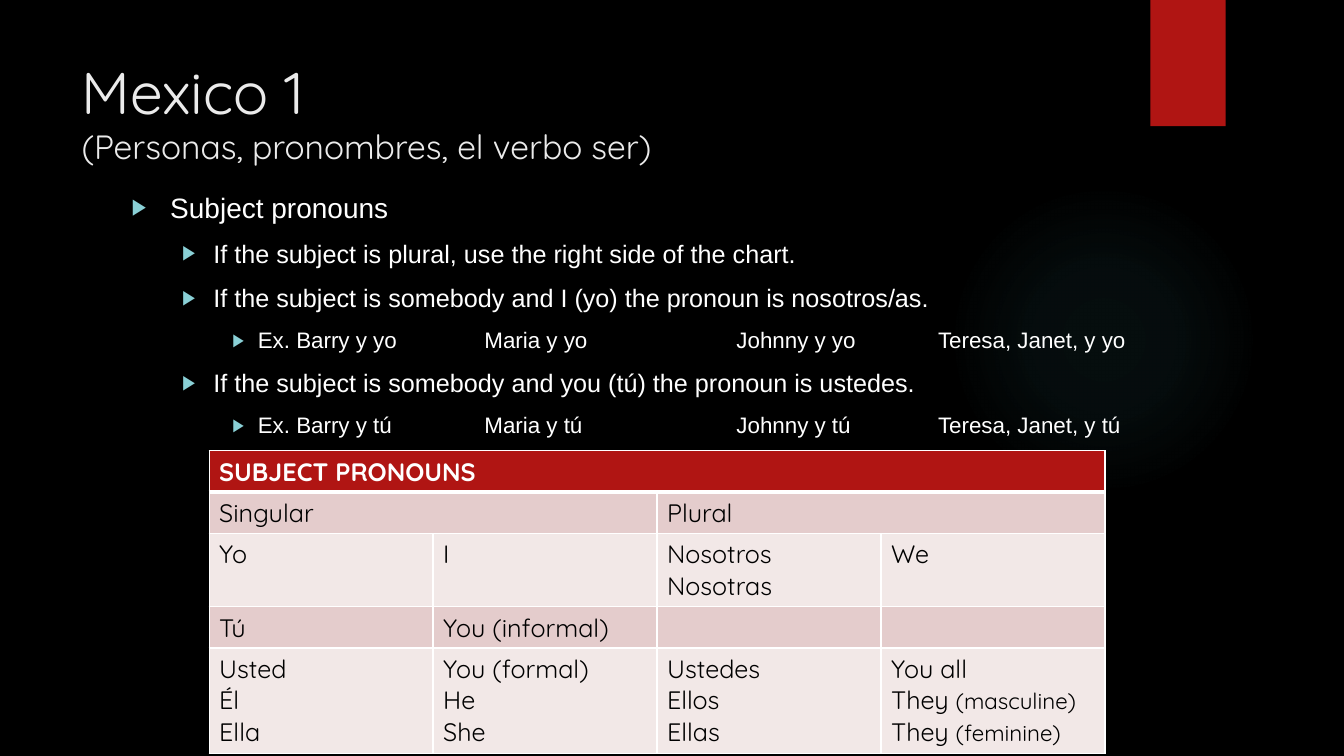
from lxml import etree
from pptx import Presentation
from pptx.dml.color import RGBColor
from pptx.enum.shapes import MSO_SHAPE
from pptx.enum.text import MSO_ANCHOR, MSO_AUTO_SIZE, PP_ALIGN
from pptx.oxml import parse_xml
from pptx.oxml.ns import qn
from pptx.util import Cm, Pt

OVAL, RECT = MSO_SHAPE.OVAL, MSO_SHAPE.RECTANGLE
TOP, LEFT, FIXED = MSO_ANCHOR.TOP, PP_ALIGN.LEFT, MSO_AUTO_SIZE.NONE

BLACK = RGBColor(0x00, 0x00, 0x00)
WHITE = RGBColor(0xFF, 0xFF, 0xFF)
PALE = RGBColor(0xEB, 0xEB, 0xEB)
RED = RGBColor(0xB0, 0x15, 0x13)
ROSE = RGBColor(0xE4, 0xCC, 0xCC)
BLUSH = RGBColor(0xF2, 0xE8, 0xE7)
TEAL = RGBColor(0x50, 0xB9, 0xC1)
AQUA = RGBColor(0x8A, 0xD0, 0xD6)
HEAD, BODY = "Quicksand", "Arial"
NS = 'xmlns:a="http://schemas.openxmlformats.org/drawingml/2006/main"'

# Content
TITLE = [("Mexico 1", 42), ("(Personas, pronombres, el verbo ser)", 24)]
POINTS = [  # level, text
    (0, "Subject pronouns"),
    (1, "If the subject is plural, use the right side of the chart."),
    (1, "If the subject is somebody and I (yo) the pronoun is nosotros/as."),
    (2, "Ex. Barry y yo\t\tMaria y yo\t\t\tJohnny y yo\t\tTeresa, Janet, y yo"),
    (1, "If the subject is somebody and you (tú) the pronoun is ustedes."),
    (2, "Ex. Barry y tú \t\tMaria y tú \t\t\tJohnny y tú \t\tTeresa, Janet, y tú"),
]
LEVELS = [(20, 0.97, 0.97), (18, 2.06, 0.79), (16, 3.18, 0.64)]  # size, indent, hang
ROWS = [
    ["SUBJECT PRONOUNS", "", "", ""],
    ["Singular", "", "Plural", ""],
    ["Yo", "I", "Nosotros\nNosotras", "We"],
    ["Tú", "You (informal)", "", ""],
    ["Usted\nÉl\nElla", "You (formal)\nHe\nShe", "Ustedes\nEllos\nEllas",
     "You all\nThey (masculine)\nThey (feminine)"],
]
SMALL = ("(masculine)", "(feminine)")
SPANS = [(0, 0, 3), (1, 0, 1), (1, 2, 3)]  # row, first column, last column
FILLS = [RED, ROSE, BLUSH, ROSE, BLUSH]


def style(run, size, font, color, bold=False):
    run.font.size, run.font.name, run.font.bold = Pt(size), font, bold
    run.font.color.rgb = color


def add_part(kind, x, y, w, h):
    part = slide.shapes.add_shape(kind, Cm(x), Cm(y), Cm(w), Cm(h))
    part.shadow.inherit = False
    part.line.fill.background()
    part.fill.solid()
    part.fill.fore_color.rgb = RED
    return part


def add_bullet(para, left, hang):
    props = para._p.get_or_add_pPr()
    props.set("marL", str(Cm(left)))
    props.set("indent", str(-Cm(hang)))
    props.set("defTabSz", str(Cm(1.27)))
    color = etree.SubElement(props, qn("a:buClr"))
    etree.SubElement(color, qn("a:srgbClr"), val=str(AQUA))
    etree.SubElement(props, qn("a:buSzPct"), val="80000")
    etree.SubElement(props, qn("a:buFont"), typeface=BODY)
    etree.SubElement(props, qn("a:buChar"), char="▶")


def add_edges(cell, row):
    props = cell._tc.get_or_add_tcPr()
    thick = {"T": 3 if row == 1 else 1, "B": 3 if row == 0 else 1}
    for spot, side in enumerate("LRTB"):
        props.insert(spot, parse_xml(
            f'<a:ln{side} {NS} w="{Pt(thick.get(side, 1))}"><a:solidFill>'
            f'<a:srgbClr val="{WHITE}"/></a:solidFill></a:ln{side}>'))


deck = Presentation()
deck.slide_width, deck.slide_height = Cm(33.87), Cm(19.05)
slide = deck.slides.add_slide(deck.slide_layouts[5])
slide.background.fill.solid()
slide.background.fill.fore_color.rgb = BLACK

# Glow and red tab
glow = add_part(OVAL, 23.9, 4.65, 7.82, 7.82)
stops = "".join(
    f'<a:gs pos="{spot}000"><a:srgbClr val="{TEAL}"><a:alpha val="{alpha}000"/>'
    "</a:srgbClr></a:gs>" for spot, alpha in [(0, 7), (36, 6), (69, 0)])
props = glow._element.spPr
props.replace(props.find(qn("a:solidFill")), parse_xml(
    f'<a:gradFill {NS}><a:gsLst>{stops}</a:gsLst><a:path path="circle">'
    '<a:fillToRect l="50000" t="50000" r="50000" b="50000"/></a:path></a:gradFill>'))
tab = add_part(RECT, 28.99, 0, 1.9, 3.18)
tab._element.spPr.find(qn("a:effectLst")).append(parse_xml(
    f'<a:outerShdw {NS} blurRad="{Pt(3)}" dist="{Pt(2)}" dir="5400000">'
    f'<a:srgbClr val="{BLACK}"><a:alpha val="45000"/></a:srgbClr></a:outerShdw>'))

# Title
title = slide.shapes.title
title.left, title.top, title.width, title.height = Cm(1.8), Cm(1.27), Cm(26.14), Cm(3.89)
frame = title.text_frame
frame.text = "\v".join(line for line, size in TITLE)
frame.vertical_anchor, frame.auto_size, frame.word_wrap = TOP, FIXED, True
frame.paragraphs[0].alignment = LEFT
for run, (line, size) in zip(frame.paragraphs[0].runs, TITLE):
    style(run, size, HEAD, PALE)

# Bullet points
frame = slide.shapes.add_textbox(Cm(3.07), Cm(4.67), Cm(27), Cm(11.66)).text_frame
frame.word_wrap = True
for spot, (level, text) in enumerate(POINTS):
    para = frame.add_paragraph() if spot else frame.paragraphs[0]
    size, left, hang = LEVELS[level]
    para.text = text
    para.level = level
    add_bullet(para, left, hang)
    if spot:
        para.space_before = Pt(10)
    for run in para.runs:
        style(run, size, BODY, WHITE)

# Pronoun table
lines = [max(text.count("\n") for text in row) for row in ROWS]
heights = [1.04 + 0.81 * extra for extra in lines]
table = slide.shapes.add_table(len(ROWS), 4, Cm(5.27), Cm(11.36),
                               Cm(22.58), Cm(sum(heights))).table
for row, height in zip(table.rows, heights):
    row.height = Cm(height)
for r, first, last in SPANS:
    table.cell(r, first).merge(table.cell(r, last))
for r, row in enumerate(ROWS):
    for c, text in enumerate(row):
        cell = table.cell(r, c)
        cell.fill.solid()
        cell.fill.fore_color.rgb = FILLS[r]
        add_edges(cell, r)
        cell.text = text
        for para in cell.text_frame.paragraphs:
            para.font.size = Pt(18)
            word, gap, note = para.text.partition(" ")
            if note in SMALL:
                para.text = word + gap
                para.add_run().text = note
            for run in para.runs:
                style(run, 16 if run.text in SMALL else 18, HEAD,
                      BLACK if r else WHITE, r == 0)

deck.save("out.pptx")
